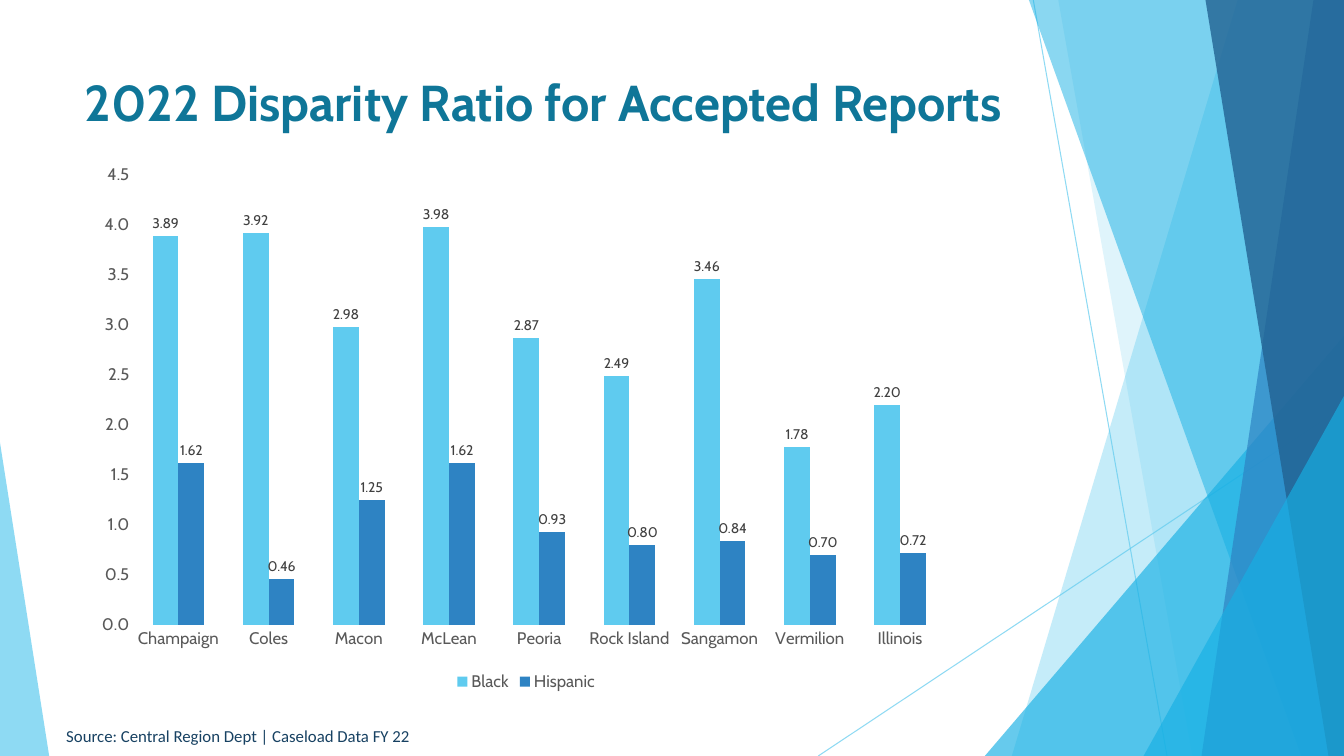
from dataclasses import dataclass

from lxml.etree import SubElement
from pptx import Presentation
from pptx.chart.data import CategoryChartData
from pptx.dml.color import RGBColor
from pptx.enum.chart import XL_CHART_TYPE as ChartType
from pptx.enum.chart import XL_LABEL_POSITION as LabelPosition
from pptx.enum.chart import XL_LEGEND_POSITION as LegendPosition
from pptx.enum.chart import XL_TICK_MARK as TickMark
from pptx.enum.shapes import MSO_CONNECTOR as ConnectorType
from pptx.enum.shapes import MSO_SHAPE as ShapeType
from pptx.enum.text import MSO_ANCHOR as Anchor
from pptx.enum.text import MSO_AUTO_SIZE as AutoSize
from pptx.enum.text import PP_ALIGN as Align
from pptx.oxml import parse_xml
from pptx.oxml.ns import nsdecls, qn
from pptx.util import Cm, Pt


@dataclass(frozen=True)
class Theme:
    sky: str = "5FCBEF"
    cyan: str = "17B0E4"
    blue: str = "2E83C3"
    navy: str = "226292"
    title: str = "0F7698"
    source: str = "174162"
    axis: str = "595959"
    label: str = "404040"
    black: str = "000000"
    heading_font: str = "Cabin"
    source_font: str = "Calibri"
    title_size: int = 36
    body_size: int = 12
    label_size: int = 10
    hairline: float = 0.75


@dataclass(frozen=True)
class Box:
    """A region of the slide, in centimetres."""
    left: float
    top: float
    width: float
    height: float

    @property
    def lengths(self):
        return Cm(self.left), Cm(self.top), Cm(self.width), Cm(self.height)


THEME = Theme()
PAGE = Box(0, 0, 33.87, 19.05)
FACETS = Box(20.62, 0, 13.25, 19.05)
CORNER = Box(0, 11.15, 1.24, 7.9)
TITLE = Box(1.88, 1.52, 25.68, 2.06)
CHART = Box(2.26, 3.86, 22, 13.67)
SOURCE = Box(1.42, 18.16, 9.55, 0.76)

COUNTIES = ("Champaign", "Coles", "Macon", "McLean", "Peoria",
            "Rock Island", "Sangamon", "Vermilion", "Illinois")
RATIOS = (
    ("Black", THEME.sky, (3.89, 3.92, 2.98, 3.98, 2.87, 2.49, 3.46, 1.78, 2.2)),
    ("Hispanic", THEME.blue, (1.62, 0.46, 1.25, 1.62, 0.93, 0.8, 0.84, 0.7, 0.72)),
)


def style_font(font, size, color, name=THEME.heading_font, bold=False):
    font.name, font.size, font.bold = name, Pt(size), bold
    font.color.rgb = RGBColor.from_string(color)


def set_opacity(shape, percent):
    color = next(shape.element.iter(qn("a:srgbClr")))
    SubElement(color, qn("a:alpha")).set("val", str(percent * 1000))


def paint_facet(shape, color, opacity):
    shape.shadow.inherit = False
    shape.fill.solid()
    shape.fill.fore_color.rgb = RGBColor.from_string(color)
    shape.line.fill.background()
    set_opacity(shape, opacity)


def add_ray(page, box, start, end):
    """Draw a hairline between two points relative to the box."""
    ray = page.shapes.add_connector(
        ConnectorType.STRAIGHT,
        Cm(box.left + start[0]), Cm(box.top + start[1]),
        Cm(box.left + end[0]), Cm(box.top + end[1]))
    ray.line.color.rgb = RGBColor.from_string(THEME.sky)
    ray.line.width = Pt(THEME.hairline)
    set_opacity(ray, 70)
    SubElement(ray.element.spPr, qn("a:effectLst"))


def add_band(page, box, top_left, bottom_left, color, opacity):
    """Fill the box from a slanted left edge to its right side."""
    right, bottom = box.left + box.width, box.top + box.height
    outline = page.shapes.build_freeform(Cm(box.left + top_left), Cm(box.top))
    outline.add_line_segments([
        (Cm(right), Cm(box.top)),
        (Cm(right), Cm(bottom)),
        (Cm(box.left + bottom_left), Cm(bottom)),
    ])
    paint_facet(outline.convert_to_shape(), color, opacity)


def add_wedge(page, box, apex, color, opacity):
    wedge = page.shapes.add_shape(ShapeType.ISOSCELES_TRIANGLE, *box.lengths)
    wedge.adjustments[0] = apex
    paint_facet(wedge, color, opacity)


def add_right_wedge(page, box, width, height):
    """Place a wedge in the bottom right corner of the box."""
    place = Box(box.left + box.width - width, box.top + box.height - height,
                width, height)
    add_wedge(page, place, 1, THEME.cyan, 66)


def add_facets(page, box):
    add_ray(page, box, (5.42, 0), (8.79, box.height))
    add_ray(page, box, (box.width, 10.24), (0, box.height))
    add_band(page, box, 10.57, 4.88, THEME.sky, 36)
    add_band(page, box, 6.05, 9.43, THEME.sky, 20)
    add_right_wedge(page, box, 9.05, 10.59)
    add_band(page, box, 5.31, 12.17, THEME.cyan, 50)
    add_band(page, box, 12.48, 9.66, THEME.blue, 70)
    add_band(page, box, 9.76, 12.86, THEME.navy, 80)
    add_right_wedge(page, box, 5.05, 9.07)


def place_title(page, box):
    title = page.shapes.title
    title.left, title.top, title.width, title.height = box.lengths
    title.element.getparent().append(title.element)  # in front of the facets
    frame = title.text_frame
    frame.auto_size = AutoSize.NONE
    frame.vertical_anchor = Anchor.MIDDLE
    para = frame.paragraphs[0]
    para.alignment = Align.LEFT
    span = para.add_run()
    span.text = "2022 Disparity Ratio for Accepted Reports"
    style_font(span.font, THEME.title_size, THEME.title, bold=True)


def add_source(page, box):
    frame = page.shapes.add_textbox(*box.lengths).text_frame
    frame.word_wrap = True
    frame.auto_size = AutoSize.SHAPE_TO_FIT_TEXT
    span = frame.paragraphs[0].add_run()
    span.text = "Source: Central Region Dept | Caseload Data FY 22"
    style_font(span.font, THEME.body_size, THEME.source, THEME.source_font)


def style_axis(axis):
    axis.has_major_gridlines = False
    axis.major_tick_mark = axis.minor_tick_mark = TickMark.NONE
    axis.format.line.fill.background()
    style_font(axis.tick_labels.font, THEME.body_size, THEME.axis)


def fix_plot_area(chart, **fractions):
    """Set the inner plot area as fractions of the chart."""
    area = next(chart.element.iter(qn("c:plotArea")))
    for layout in area.findall(qn("c:layout")):
        area.remove(layout)
    values = "".join(f'<c:{key} val="{value}"/>' for key, value in fractions.items())
    area.insert(0, parse_xml(
        f'<c:layout {nsdecls("c")}><c:manualLayout><c:layoutTarget val="inner"/>'
        f'<c:xMode val="edge"/><c:yMode val="edge"/>{values}'
        '</c:manualLayout></c:layout>'))


def style_series(series, color):
    series.format.fill.solid()
    series.format.fill.fore_color.rgb = RGBColor.from_string(color)
    labels = series.data_labels
    labels.show_value = True
    labels.position = LabelPosition.OUTSIDE_END
    labels.number_format, labels.number_format_is_linked = "#,##0.00", False
    style_font(labels.font, THEME.label_size, THEME.label)


def add_ratio_chart(page, box):
    data = CategoryChartData()
    data.categories = COUNTIES
    for name, _, values in RATIOS:
        data.add_series(name, values)
    chart = page.shapes.add_chart(
        ChartType.COLUMN_CLUSTERED, *box.lengths, data).chart
    chart.has_title = False
    style_font(chart.font, THEME.body_size, THEME.black)
    chart.has_legend = True
    chart.legend.position = LegendPosition.BOTTOM
    chart.legend.include_in_layout = False
    style_font(chart.legend.font, THEME.body_size, THEME.axis)

    style_axis(chart.category_axis)
    scale = chart.value_axis
    style_axis(scale)
    scale.minimum_scale, scale.maximum_scale, scale.major_unit = 0, 4.5, 0.5
    scale.tick_labels.number_format = "0.0"
    scale.tick_labels.number_format_is_linked = False

    plot = chart.plots[0]
    plot.gap_width, plot.overlap = 150, 0
    plot.vary_by_categories = False
    for series, (_, color, _) in zip(plot.series, RATIOS):
        style_series(series, color)
    fix_plot_area(chart, x=0.05, y=0.04, w=0.93, h=0.83)


def main():
    deck = Presentation()
    deck.slide_width, deck.slide_height = Cm(PAGE.width), Cm(PAGE.height)
    page = deck.slides.add_slide(deck.slide_layouts.get_by_name("Title Only"))
    add_facets(page, FACETS)
    add_wedge(page, CORNER, 0, THEME.sky, 70)
    place_title(page, TITLE)
    add_source(page, SOURCE)
    add_ratio_chart(page, CHART)
    deck.save("out.pptx")


if __name__ == "__main__":
    main()
